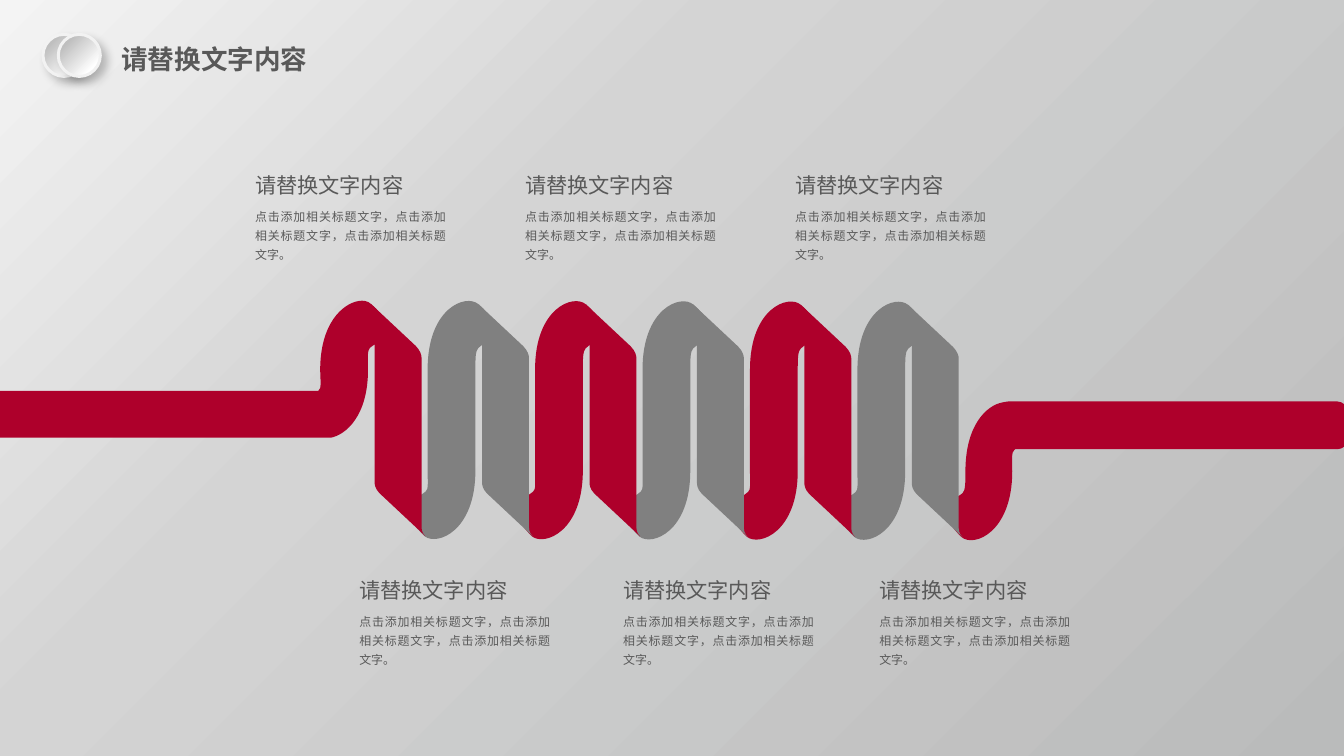
from dataclasses import dataclass

from lxml import etree
from pptx import Presentation
from pptx import util as u
from pptx.dml.color import RGBColor
from pptx.enum import shapes, text
from pptx.oxml.ns import qn


@dataclass(frozen=True)
class Theme:
    red: str = "AE002B"
    gray: str = "808080"
    ink: str = "595959"
    rim: str = "F2F2F2"
    shadow: str = "000000"
    backdrop: tuple = ((0, "F4F4F4"), (35, "D4D4D4"), (100, "BABBBB"))
    button: tuple = ((20, "BFBFBF"), (80, "FFFFFF"), (100, "FFFFFF"))
    heading_font: str = "Calibri"
    body_font: str = "Arial"
    title_size: int = 20
    heading_size: int = 16
    body_size: int = 9


THEME = Theme()
HEADING = "请替换文字内容"
BODY = "点击添加相关标题文字，点击添加相关标题文字，点击添加相关标题文字。"

# Outlines in inches: a pair is a straight step, six numbers are a Bezier curve
LEFT_BAND = [
    (3.75, 3.15), (3.8, 3.14, 3.85, 3.15, 3.88, 3.18),
    (3.97, 3.25, 4.11, 3.44, 4.08, 3.53), (4.06, 3.6, 3.97, 3.55, 3.87, 3.64),
    (3.84, 3.67, 3.85, 3.75, 3.85, 3.87), (3.85, 4.35, 3.62, 4.55, 3.46, 4.58),
    (-0.04, 4.58), (-0.04, 4.09), (3.33, 4.09), (3.35, 4.06),
    (3.36, 4.02, 3.35, 3.95, 3.35, 3.87), (3.35, 3.39, 3.58, 3.18, 3.75, 3.15),
]
RIGHT_BAND = [
    (10.55, 4.2), (13.99, 4.2), (14.05, 4.2, 14.11, 4.26, 14.11, 4.32),
    (14.11, 4.58), (14.11, 4.65, 14.05, 4.7, 13.99, 4.7), (10.62, 4.7),
    (10.61, 4.71), (10.58, 4.73, 10.59, 4.81, 10.59, 4.93),
    (10.59, 5.57, 10.19, 5.73, 10.06, 5.62), (9.98, 5.55, 9.84, 5.36, 9.87, 5.26),
    (9.89, 5.2, 9.98, 5.24, 10.07, 5.16), (10.1, 5.13, 10.1, 5.05, 10.1, 4.93),
    (10.1, 4.45, 10.32, 4.24, 10.49, 4.21), (10.51, 4.21, 10.52, 4.2, 10.55, 4.2),
]
RISING_LOOP = [
    (3.85, 4.92), (3.85, 3.87), (3.85, 3.75, 3.85, 3.67, 3.88, 3.64),
    (3.97, 3.55, 4.06, 3.6, 4.08, 3.53), (4.11, 3.44, 3.97, 3.25, 3.88, 3.18),
    (3.75, 3.07, 3.35, 3.22, 3.35, 3.86), (3.35, 4.92),
    (3.35, 5.04, 3.36, 5.12, 3.33, 5.14), (3.23, 5.23, 3.14, 5.19, 3.12, 5.25),
    (3.1, 5.34, 3.23, 5.53, 3.32, 5.61), (3.45, 5.71, 3.85, 5.56, 3.85, 4.92),
]
FALLING_STRAP = [
    (4.41, 5.52), (4.41, 3.74), (4.41, 3.72, 4.4, 3.67, 4.35, 3.62),
    (3.88, 3.18), (3.89, 3.18, 3.92, 3.22, 3.92, 3.27), (3.92, 5.05),
    (3.92, 5.06, 3.92, 5.11, 3.97, 5.16), (4.45, 5.61),
    (4.44, 5.6, 4.41, 5.57, 4.41, 5.52),
]
COILS = 6
PITCH, DROP = 1.124, 0.002


def apply(target, values):
    for name, value in values.items():
        setattr(target, name, value)


def set_gradient(fill, owner, stops):
    fill.gradient()
    fill.gradient_angle = 315
    stop_list = next(owner.iter(qn("a:gsLst")))
    for old in list(stop_list):
        stop_list.remove(old)
    for position, color in stops:
        stop = etree.SubElement(stop_list, qn("a:gs"), pos=str(position * 1000))
        etree.SubElement(stop, qn("a:srgbClr"), val=color)


def bend(ribbon, steps):
    """Swap each straight segment that stands for a curve for a real Bezier."""
    segments = list(ribbon.element.iter(qn("a:lnTo")))
    for segment, step in zip(segments, steps):
        if len(step) == 2:
            continue
        curve = etree.Element(qn("a:cubicBezTo"))
        for x, y in zip(step[::2], step[1::2]):
            etree.SubElement(curve, qn("a:pt"), x=str(x - ribbon.left),
                             y=str(y - ribbon.top))
        segment.getparent().replace(segment, curve)


def add_ribbon(slide, outline, color, turn=0):
    shift = (turn * PITCH, turn * DROP)
    steps = [[int(u.Inches(value + shift[i % 2])) for i, value in enumerate(step)]
             for step in outline]
    builder = slide.shapes.build_freeform(*steps[0])
    builder.add_line_segments([step[-2:] for step in steps[1:]], close=True)
    ribbon = builder.convert_to_shape()
    bend(ribbon, steps[1:])
    ribbon.shadow.inherit = False
    ribbon.fill.solid()
    ribbon.fill.fore_color.rgb = RGBColor.from_string(color)
    ribbon.line.fill.background()


def write(box, words, font, frame=None, paragraph=None):
    apply(box.text_frame, {"word_wrap": True, "vertical_anchor": text.MSO_ANCHOR.TOP,
                           "auto_size": text.MSO_AUTO_SIZE.SHAPE_TO_FIT_TEXT,
                           **(frame or {})})
    line = box.text_frame.paragraphs[0]
    line.text = words
    apply(line, {"alignment": text.PP_ALIGN.LEFT, **(paragraph or {})})
    apply(line.font, font)
    line.font.color.rgb = RGBColor.from_string(THEME.ink)


def add_title(slide):
    title = slide.shapes.title
    apply(title, {"left": u.Inches(1.17), "top": u.Inches(0.4),
                  "width": u.Inches(2.17), "height": u.Inches(0.44)})
    write(title, HEADING,
          {"name": THEME.heading_font, "size": u.Pt(THEME.title_size), "bold": True},
          frame={"word_wrap": False})


def add_caption(slide, left, top):
    heading = slide.shapes.add_textbox(
        u.Inches(left), u.Inches(top), u.Inches(2.04), u.Inches(0.37))
    write(heading, HEADING,
          {"name": THEME.heading_font, "size": u.Pt(THEME.heading_size)})
    body = slide.shapes.add_textbox(
        u.Inches(left), u.Inches(top + 0.35), u.Inches(2.19), u.Inches(0.69))
    write(body, BODY, {"name": THEME.body_font, "size": u.Pt(THEME.body_size)},
          paragraph={"alignment": text.PP_ALIGN.JUSTIFY, "line_spacing": 1.3})


def add_button(slide, left):
    button = slide.shapes.add_shape(
        shapes.MSO_SHAPE.OVAL, u.Inches(left), u.Inches(0.36),
        u.Inches(0.44), u.Inches(0.44))
    set_gradient(button.fill, button.element, THEME.button)
    button.line.color.rgb = RGBColor.from_string(THEME.rim)
    button.line.width = u.Pt(2.25)
    button.shadow.inherit = False
    effects = next(button.element.iter(qn("a:effectLst")))
    shadow = etree.SubElement(
        effects, qn("a:outerShdw"), blurRad=str(u.Pt(7)), dist=str(u.Pt(5.9)),
        dir="2700000", algn="tl", rotWithShape="0")
    color = etree.SubElement(shadow, qn("a:srgbClr"), val=THEME.shadow)
    etree.SubElement(color, qn("a:alpha"), val="23000")


def main():
    deck = Presentation()
    apply(deck, {"slide_width": u.Inches(14.06), "slide_height": u.Inches(7.91)})
    slide = deck.slides.add_slide(deck.slide_layouts[5])
    set_gradient(slide.background.fill, slide.element, THEME.backdrop)
    add_title(slide)

    # Coiled ribbon, laid from right to left so each turn overlaps the next
    add_ribbon(slide, RIGHT_BAND, THEME.red)
    for turn in reversed(range(COILS)):
        color = THEME.gray if turn % 2 else THEME.red
        if turn:
            add_ribbon(slide, RISING_LOOP, color, turn)
        else:
            add_ribbon(slide, LEFT_BAND, color)
        add_ribbon(slide, FALLING_STRAP, color, turn)

    # Captions above and below the coil
    for column, lower_left in enumerate((3.66, 6.42, 9.1)):
        add_caption(slide, 2.57 + column * 2.825, 1.75)
        add_caption(slide, lower_left, 5.99)

    # Overlapping buttons beside the title
    for left in (0.45, 0.61):
        add_button(slide, left)

    deck.save("out.pptx")


if __name__ == "__main__":
    main()
